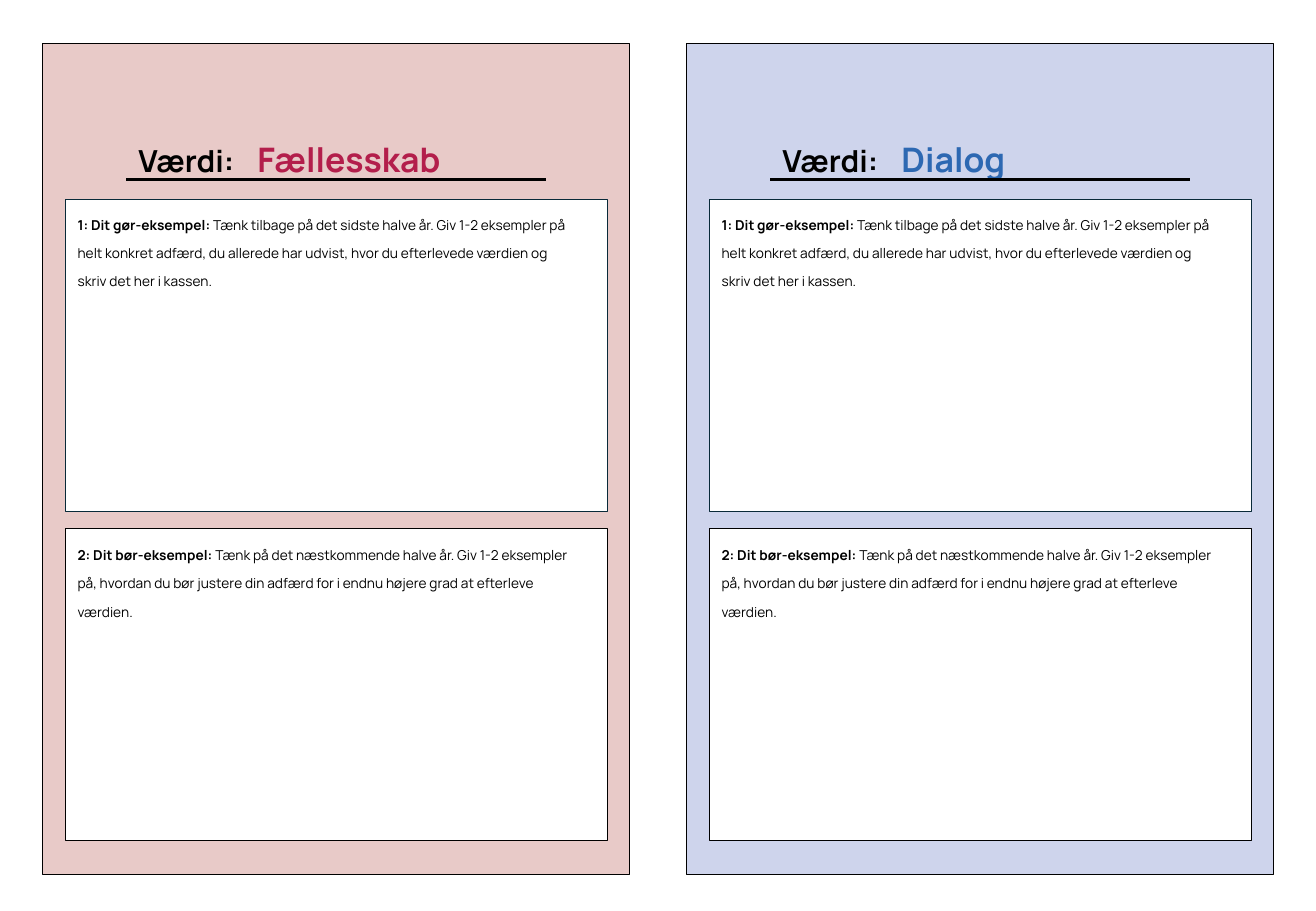
from dataclasses import dataclass

from lxml import etree
from pptx import Presentation
from pptx.dml.color import RGBColor
from pptx.enum.shapes import MSO_CONNECTOR, MSO_SHAPE
from pptx.oxml.ns import qn
from pptx.util import Inches, Pt

RECTANGLE = MSO_SHAPE.RECTANGLE
STRAIGHT = MSO_CONNECTOR.STRAIGHT


@dataclass(frozen=True)
class Theme:
    font: str = "Manrope"
    black: str = "000000"
    white: str = "FFFFFF"
    navy: str = "092A39"
    label_size: int = 18
    value_size: int = 20
    body_size: int = 14
    outline: float = 0.75
    rule: float = 1.5


theme = Theme()

# Left edge, background, value name and value colour of each card
CARDS = [
    (0.35, "E8CAC8", "Fællesskab", "B31E4B"),
    (5.65, "CED4EC", "Dialog", "2D68B2"),
]

# Top, outline, text top, text width, text height, lead-in and task
TASKS = [
    (1.64, theme.navy, 1.71, 4.26, 0.88, "1: Dit gør-eksempel: ",
     "Tænk tilbage på det sidste halve år. Giv 1-2 eksempler på helt konkret "
     "adfærd, du allerede har udvist, hvor du efterlevede værdien og skriv "
     "det her i kassen."),
    (4.35, theme.black, 4.43, 4.36, 0.81, "2: Dit bør-eksempel: ",
     "Tænk på det næstkommende halve år. Giv 1-2 eksempler på, hvordan du bør "
     "justere din adfærd for i endnu højere grad at efterleve værdien."),
]

deck = Presentation()
deck.slide_width = Inches(10.83)
deck.slide_height = Inches(7.5)
page = deck.slides.add_slide(deck.slide_layouts[6])


def add_panel(left, top, width, height, fill, outline):
    panel = page.shapes.add_shape(
        RECTANGLE, Inches(left), Inches(top), Inches(width), Inches(height))
    panel.shadow.inherit = False
    panel.fill.solid()
    panel.fill.fore_color.rgb = RGBColor.from_string(fill)
    panel.line.color.rgb = RGBColor.from_string(outline)
    panel.line.width = Pt(theme.outline)


def add_paragraph_box(left, top, width, height):
    box = page.shapes.add_textbox(
        Inches(left), Inches(top), Inches(width), Inches(height))
    box.text_frame.word_wrap = True
    return box.text_frame.paragraphs[0]


for card_left, background, value, accent in CARDS:
    # Card background
    add_panel(card_left, 0.36, 4.83, 6.84, background, theme.black)

    # Heading, with the value name at a tab stop
    heading_left = card_left + 0.69
    para = add_paragraph_box(heading_left, 1.09, 3.45, 0.44)
    tabs = etree.SubElement(para._p.get_or_add_pPr(), qn("a:tabLst"))
    etree.SubElement(tabs, qn("a:tab"), pos=str(Inches(0.98)), algn="l")
    para.font.name = theme.font
    para.font.bold = True
    for words, size, color in [("Værdi:\t", theme.label_size, theme.black),
                               (value, theme.value_size, accent)]:
        span = para.add_run()
        span.text = words
        span.font.size = Pt(size)
        span.font.color.rgb = RGBColor.from_string(color)

    # Rule under the heading
    rule = page.shapes.add_connector(
        STRAIGHT, Inches(heading_left), Inches(1.48),
        Inches(heading_left + 3.45), Inches(1.48))
    rule.line.color.rgb = RGBColor.from_string(theme.black)
    rule.line.width = Pt(theme.rule)
    etree.SubElement(rule._element.spPr, qn("a:effectLst"))

    # Writing boxes with their raised task text
    task_left = card_left + 0.19
    for top, outline, text_top, width, height, lead, task in TASKS:
        add_panel(task_left, top, 4.46, 2.57, theme.white, outline)
        para = add_paragraph_box(task_left, text_top, width, height)
        para.font.name = theme.font
        para.font.size = Pt(theme.body_size)
        para.font.color.rgb = RGBColor.from_string(theme.black)
        for words, bold in [(lead, True), (task, False)]:
            span = para.add_run()
            span.text = words
            span.font.bold = bold
            span._r.get_or_add_rPr().set("baseline", "30000")

deck.save("out.pptx")
